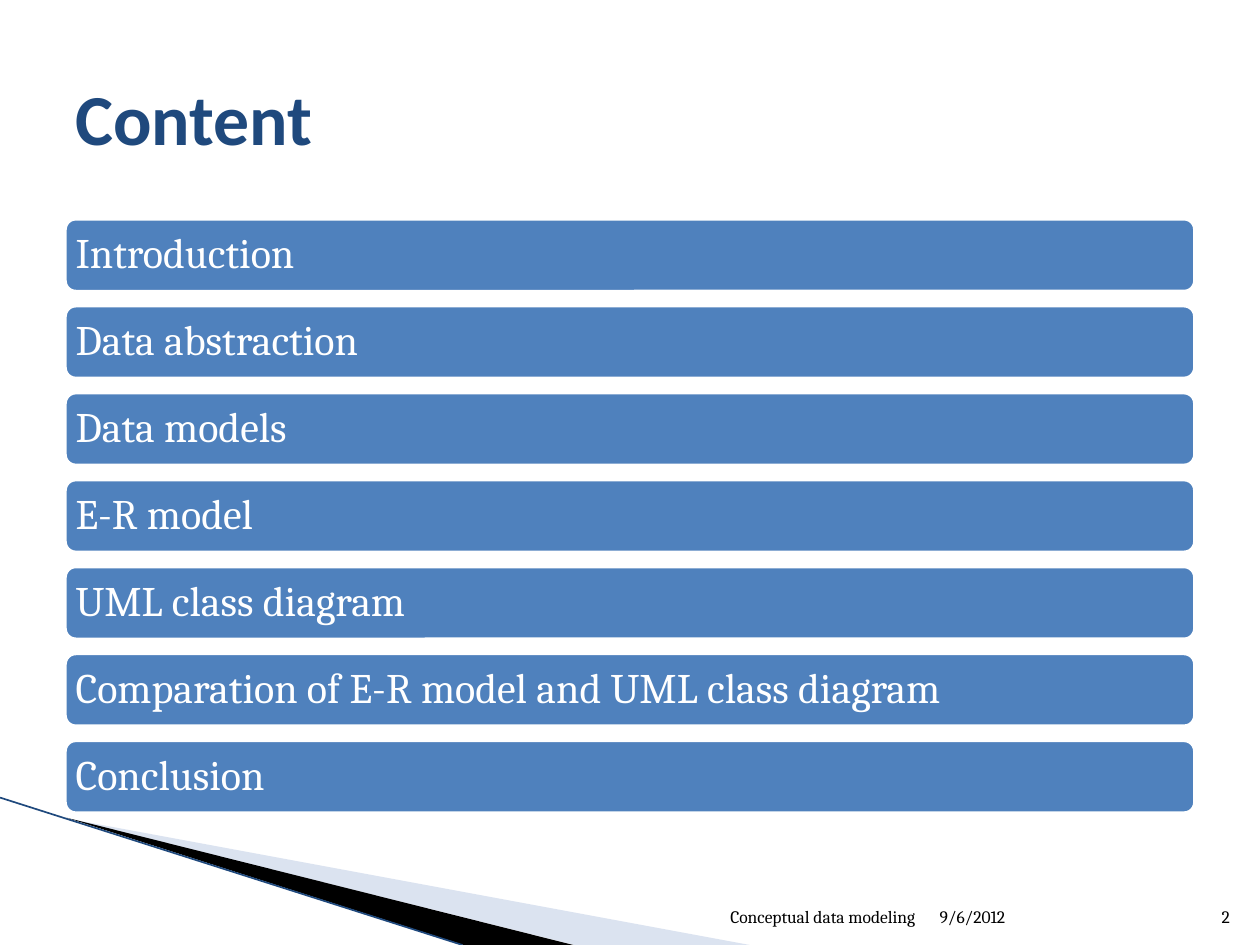
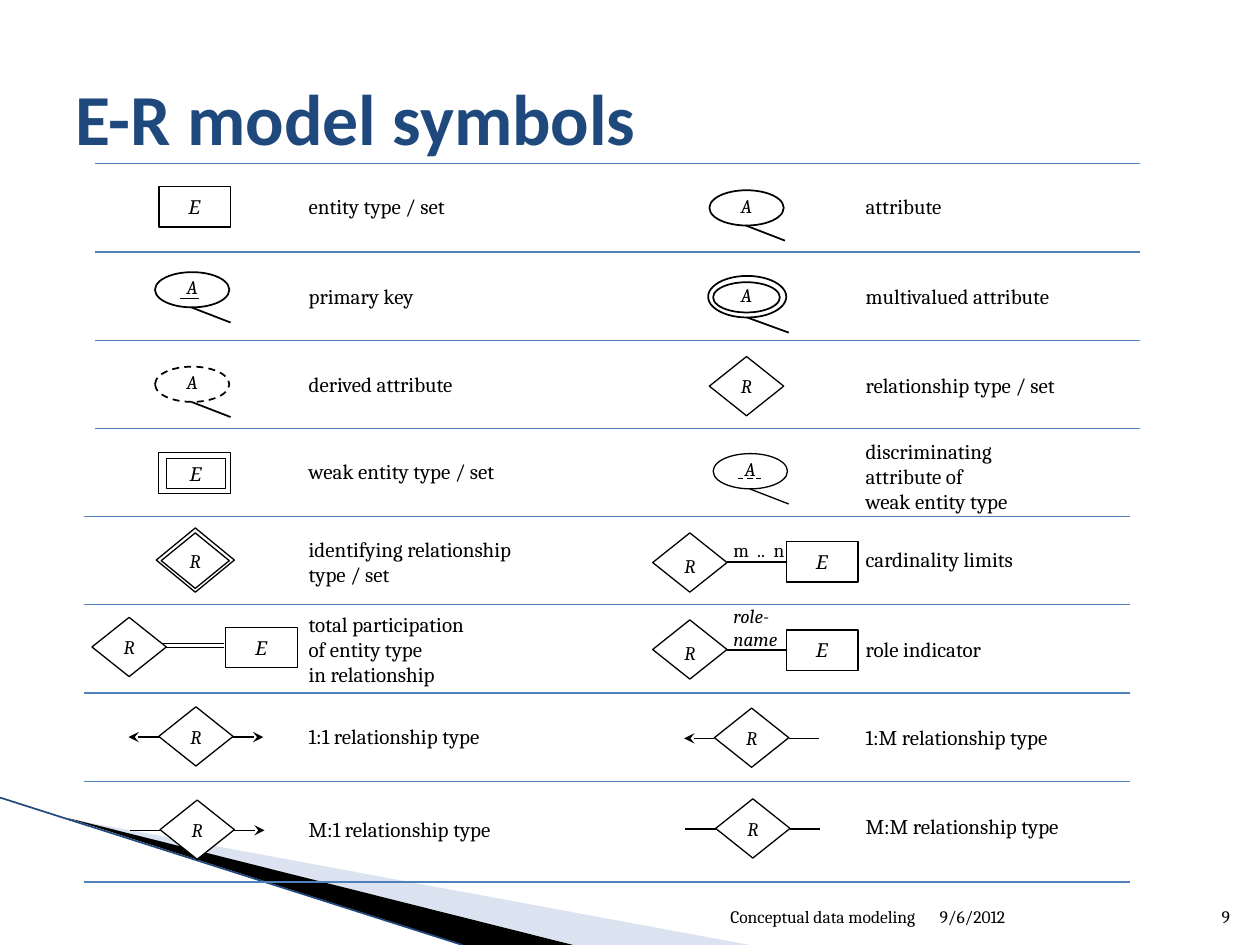
from dataclasses import dataclass, replace
from typing import Optional

from lxml import etree
from pptx import Presentation
from pptx.dml.color import RGBColor
from pptx.enum.dml import MSO_LINE
from pptx.enum.shapes import MSO_CONNECTOR, MSO_SHAPE
from pptx.enum.text import MSO_ANCHOR, PP_ALIGN
from pptx.oxml.ns import qn
from pptx.util import Emu, Pt

PX = 9144  # EMU per px, 100 px to the inch
PAGE_WIDTH, PAGE_HEIGHT = 1000, 750

BLACK, WHITE = "000000", "FFFFFF"
NAVY, BLUE, PALE_BLUE = "1F497D", "4F81BD", "A7B9DB"


@dataclass(frozen=True)
class TextStyle:
    size: int
    font: str = "Cambria"
    color: str = BLACK
    bold: bool = False
    italic: bool = False
    align: PP_ALIGN = PP_ALIGN.LEFT
    anchor: MSO_ANCHOR = MSO_ANCHOR.MIDDLE
    insets: tuple[int, int, int, int] = (10, 5, 10, 5)
    line_spacing: float = 1.0
    tabs: tuple[int, ...] = ()


TITLE = TextStyle(41, "Calibri", NAVY, bold=True)
FOOTER = TextStyle(10, anchor=MSO_ANCHOR.BOTTOM)
FOOTER_RIGHT = replace(FOOTER, align=PP_ALIGN.RIGHT)
BAR_TEXT = TextStyle(24, color=WHITE, insets=(7, 7, 7, 7), line_spacing=0.9)
LABEL = TextStyle(12, anchor=MSO_ANCHOR.TOP, insets=(2, 1, 2, 1))
ENTITY_TEXT = TextStyle(11, italic=True, align=PP_ALIGN.CENTER, insets=(2, 1, 2, 1))
ATTRIBUTE_TEXT = replace(ENTITY_TEXT, insets=(10, 1, 10, 5))
RELATION_TEXT = replace(ENTITY_TEXT, insets=(0, 5, 0, 5))
LOW_RELATION_TEXT = replace(RELATION_TEXT, anchor=MSO_ANCHOR.TOP)
ROLE_TEXT = replace(ENTITY_TEXT, align=PP_ALIGN.LEFT)
LIMITS_TEXT = replace(ROLE_TEXT, italic=False, tabs=(19, 32))


@dataclass(frozen=True)
class Node:
    kind: MSO_SHAPE
    left: int
    top: int
    width: int
    height: int
    letter: str = ""
    style: TextStyle = ENTITY_TEXT
    weight: float = 0.75
    dashed: bool = False
    stem: bool = False


@dataclass(frozen=True)
class Line:
    x1: int
    y1: int
    x2: int
    y2: int
    weight: float = 0.75
    color: str = BLACK
    dashed: bool = False
    arrow: bool = False


@dataclass(frozen=True)
class Label:
    left: int
    top: int
    text: str
    width: int = 240
    height: int = 23
    style: TextStyle = LABEL


@dataclass(frozen=True)
class Relationship:
    left: int
    top: int
    left_arrow: bool
    right_arrow: bool


def px(*lengths: int) -> list[Emu]:
    return [Emu(length * PX) for length in lengths]


def rgb(color: str) -> RGBColor:
    return RGBColor.from_string(color)


def write(shape, text: str, style: TextStyle) -> None:
    frame = shape.text_frame
    frame.word_wrap = True
    frame.vertical_anchor = style.anchor
    (frame.margin_left, frame.margin_top,
     frame.margin_right, frame.margin_bottom) = px(*style.insets)
    frame.text = text
    for paragraph in frame.paragraphs:
        paragraph.alignment = style.align
        paragraph.line_spacing = style.line_spacing
        if style.tabs:
            stops = etree.SubElement(paragraph._p.get_or_add_pPr(), qn("a:tabLst"))
            for stop in style.tabs:
                etree.SubElement(stops, qn("a:tab"), pos=str(stop * PX), algn="l")
        font = paragraph.font
        font.name, font.size = style.font, Pt(style.size)
        font.bold, font.italic = style.bold, style.italic
        font.color.rgb = rgb(style.color)


def add_label(page, label: Label) -> None:
    box = page.shapes.add_textbox(
        *px(label.left, label.top, label.width, label.height))
    write(box, label.text, label.style)


def add_box(page, kind: MSO_SHAPE, frame: tuple[int, int, int, int],
            fill: str, line: str, weight: float):
    shape = page.shapes.add_shape(kind, *px(*frame))
    shape.shadow.inherit = False
    shape.fill.solid()
    shape.fill.fore_color.rgb = rgb(fill)
    shape.line.color.rgb = rgb(line)
    shape.line.width = Pt(weight)
    return shape


def add_line(page, line: Line) -> None:
    connector = page.shapes.add_connector(
        MSO_CONNECTOR.STRAIGHT, *px(line.x1, line.y1, line.x2, line.y2))
    connector.line.color.rgb = rgb(line.color)
    connector.line.width = Pt(line.weight)
    if line.dashed:
        connector.line.dash_style = MSO_LINE.DASH
    properties = connector._element.spPr
    if line.arrow:
        etree.SubElement(properties.find(qn("a:ln")), qn("a:tailEnd"), type="stealth")
    etree.SubElement(properties, qn("a:effectLst"))


def add_node(page, node: Node) -> None:
    """Draw an E-R symbol and, for an attribute, the stem below it."""
    shape = add_box(page, node.kind, (node.left, node.top, node.width, node.height),
                    WHITE, BLACK, node.weight)
    if node.dashed:
        shape.line.dash_style = MSO_LINE.DASH
    if node.letter:
        write(shape, node.letter, node.style)
    if node.stem:
        x, y = node.left + node.width // 2, node.top + node.height
        add_line(page, Line(x, y, x + node.width // 2 + 2, y + 12, node.weight))


def add_wedge(page, points: list[tuple[int, int]], color: str,
              opacity: Optional[int] = None) -> None:
    start, *rest = [px(*point) for point in points]
    builder = page.shapes.build_freeform(*start, scale=1.0)
    builder.add_line_segments(rest, close=True)
    wedge = builder.convert_to_shape()
    wedge.shadow.inherit = False
    wedge.fill.solid()
    wedge.fill.fore_color.rgb = rgb(color)
    wedge.line.fill.background()
    if opacity is not None:
        tint = wedge._element.spPr.find(f".//{qn('a:srgbClr')}")
        etree.SubElement(tint, qn("a:alpha"), val=str(opacity * 1000))


def add_page(deck, title: str, number: int):
    """Add a page with the corner wedges, the footer and the title."""
    page = deck.slides.add_slide(deck.slide_layouts[6])
    add_wedge(page, [(55, 650), (595, 750), (456, 750)], PALE_BLUE, opacity=40)
    add_wedge(page, [(53, 649), (455, 750), (368, 750)], BLACK)
    add_line(page, Line(0, 633, 367, 750, 0.95, NAVY))
    for label in (
        Label(736, 701, "9/6/2012", 210, 40, FOOTER),
        Label(479, 701, "Conceptual data modeling", 257, 40, FOOTER_RIGHT),
        Label(946, 701, str(number), 40, 40, FOOTER_RIGHT),
        Label(50, 30, title, 900, 125, TITLE),
    ):
        add_label(page, label)
    return page


TOPICS = ["Introduction", "Data abstraction", "Data models", "E-R model",
          "UML class diagram", "Comparation of E-R model and UML class diagram",
          "Conclusion"]


def add_content_page(deck) -> None:
    page = add_page(deck, "Content", 2)
    for index, topic in enumerate(TOPICS):
        bar = add_box(page, MSO_SHAPE.ROUNDED_RECTANGLE,
                      (50, 172 + 69 * index, 900, 61), BLUE, WHITE, 4.33)
        write(bar, topic, BAR_TEXT)


def entity(left: int, top: int, weight: float = 0.75) -> Node:
    return Node(MSO_SHAPE.RECTANGLE, left, top, 57, 32, "Е", weight=weight)


def attribute(left: int, top: int, weight: float = 1, dashed: bool = False) -> Node:
    return Node(MSO_SHAPE.OVAL, left, top, 59, 28, "A", ATTRIBUTE_TEXT,
                weight, dashed, stem=True)


def relation(left: int, top: int, style: TextStyle = RELATION_TEXT) -> Node:
    return Node(MSO_SHAPE.DIAMOND, left, top, 59, 47, "R", style)


NODES = [
    entity(126, 148, weight=1),
    attribute(563, 151),
    attribute(123, 216),
    Node(MSO_SHAPE.OVAL, 562, 219, 62, 33, weight=1, stem=True),
    Node(MSO_SHAPE.OVAL, 566, 224, 53, 24, "A", ATTRIBUTE_TEXT, weight=1),
    attribute(123, 291, dashed=True),
    relation(563, 283),
    Node(MSO_SHAPE.RECTANGLE, 126, 359, 57, 33),
    Node(MSO_SHAPE.RECTANGLE, 132, 364, 47, 24, "Е"),
    attribute(566, 360, weight=0.75),
    Node(MSO_SHAPE.DIAMOND, 124, 419, 62, 51),
    Node(MSO_SHAPE.DIAMOND, 128, 423, 54, 44, "R", RELATION_TEXT),
    relation(518, 423, LOW_RELATION_TEXT),
    entity(624, 430),
    relation(73, 490),
    entity(179, 498),
    relation(518, 492, LOW_RELATION_TEXT),
    entity(624, 500),
]

LINES = [
    Line(143, 237, 158, 237, weight=1),
    Line(586, 380, 604, 380, dashed=True),
    Line(577, 446, 624, 446),
    Line(129, 511, 178, 511),
    Line(131, 514, 178, 514),
    Line(577, 516, 624, 516),
]

RELATIONSHIPS = [
    Relationship(126, 561, True, True),
    Relationship(567, 562, True, False),
    Relationship(127, 635, False, True),
    Relationship(568, 634, False, False),
]

NAME_COLUMNS = {
    243: [(153, "entity type / set"), (224, "primary key"),
          (294, "derived attribute"), (363, "weak entity type / set"),
          (425, "identifying relationship\ntype / set"),
          (484, "total participation\nof entity type\nin relationship"),
          (573, "1:1 relationship type"), (647, "M:1 relationship type")],
    685: [(153, "attribute"), (224, "multivalued attribute"),
          (295, "relationship type / set"),
          (347, "discriminating\vattribute of\nweak entity type"),
          (433, "cardinality limits"), (504, "role indicator"),
          (574, "1:M relationship type"), (645, "M:M relationship type")],
}

LINE_LABELS = [
    Label(580, 427, "m\t..\tn", 50, 19, LIMITS_TEXT),
    Label(580, 480, "role-\nname", 41, 36, ROLE_TEXT),
]


def add_relationship(page, item: Relationship) -> None:
    node = relation(item.left, item.top)
    right, middle = node.left + node.width, node.top + 24
    add_node(page, node)
    add_line(page, Line(node.left, middle, node.left - 24, middle, arrow=item.left_arrow))
    add_line(page, Line(right, middle, right + 24, middle, arrow=item.right_arrow))


def add_symbols_page(deck) -> None:
    page = add_page(deck, "E-R model symbols", 9)
    for node in NODES:
        add_node(page, node)
    for item in RELATIONSHIPS:
        add_relationship(page, item)
    for row, y in enumerate([*range(130, 621, 70), 700]):
        left = 75 if row < 4 else 67
        add_line(page, Line(left, y, left + 830, y, color=BLUE))
    for line in LINES:
        add_line(page, line)
    for left, names in NAME_COLUMNS.items():
        for top, name in names:
            add_label(page, Label(left, top, name))
    for label in LINE_LABELS:
        add_label(page, label)


def main() -> None:
    deck = Presentation()
    deck.slide_width, deck.slide_height = px(PAGE_WIDTH, PAGE_HEIGHT)
    add_content_page(deck)
    add_symbols_page(deck)
    deck.save("out.pptx")


if __name__ == "__main__":
    main()
